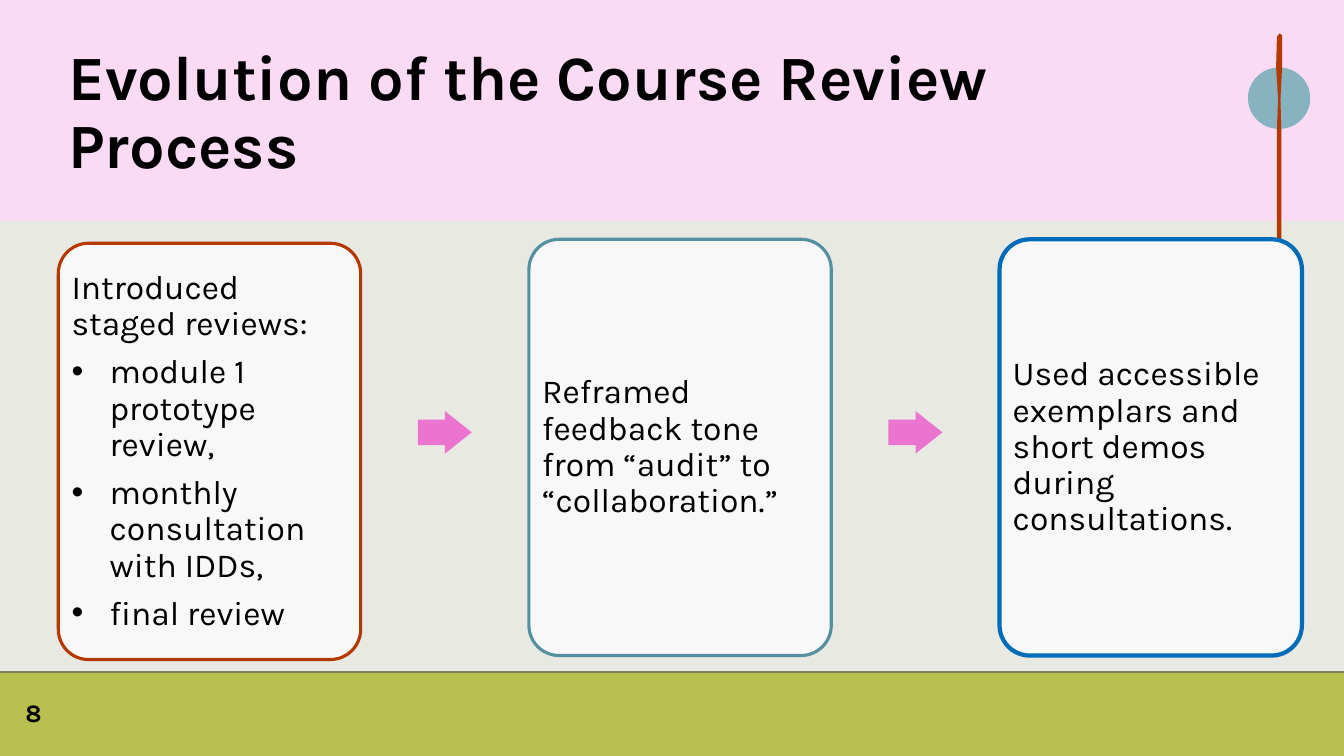
from dataclasses import dataclass

from lxml.etree import SubElement
from pptx import Presentation
from pptx.dml.color import RGBColor
from pptx.enum.shapes import MSO_CONNECTOR as Connector, MSO_SHAPE as Shape
from pptx.enum.text import MSO_ANCHOR as Anchor, MSO_AUTO_SIZE as AutoSize, PP_ALIGN as Align
from pptx.oxml.ns import qn
from pptx.util import Cm, Pt


@dataclass(frozen=True)
class Theme:
    font: str = "Karla"
    title_size: int = 45
    body_size: int = 24
    number_size: int = 18
    ink: str = "000000"
    background: str = "E8E9E2"
    header: str = "FADBF3"
    footer: str = "B8C04F"
    rule: str = "7E8263"
    disc: str = "86B3BF"
    rust: str = "B43901"
    teal: str = "54909F"
    blue: str = "006BB8"
    card: str = "F8F8F8"
    arrow: str = "EC74D1"


def color(value):
    return RGBColor.from_string(value)


def apply(target, values):
    for name, value in values.items():
        setattr(target, name, value)


class SlideBuilder:
    """Draws themed elements on one slide."""

    def __init__(self, slide, theme):
        self.slide = slide
        self.theme = theme
        fill = slide.background.fill
        fill.solid()
        fill.fore_color.rgb = color(theme.background)

    def paint(self, shape, fill, line=None, weight=0):
        shape.shadow.inherit = False
        shape.fill.solid()
        shape.fill.fore_color.rgb = color(fill)
        if line:
            shape.line.color.rgb = color(line)
            shape.line.width = Pt(weight)
        else:
            shape.line.fill.background()
        return shape

    def block(self, kind, box, fill, line=None, weight=0, adjustments=()):
        shape = self.slide.shapes.add_shape(kind, *map(Cm, box))
        for index, value in enumerate(adjustments):
            shape.adjustments[index] = value
        return self.paint(shape, fill, line, weight)

    def outline(self, points, fill):
        start, *rest = [(Cm(x), Cm(y)) for x, y in points]
        builder = self.slide.shapes.build_freeform(*start)
        builder.add_line_segments(rest, close=True)
        return self.paint(builder.convert_to_shape(), fill)

    def rule(self, start, end, line, weight):
        connector = self.slide.shapes.add_connector(Connector.STRAIGHT, *map(Cm, start + end))
        connector.line.color.rgb = color(line)
        connector.line.width = Pt(weight)
        SubElement(connector._element.spPr, qn("a:effectLst"))

    def frame(self, shape, anchor, margins):
        apply(shape.text_frame, {
            "word_wrap": True, "auto_size": AutoSize.NONE, "vertical_anchor": anchor,
            **{f"margin_{side}": Cm(value)
               for side, value in zip(("left", "top", "right", "bottom"), margins)},
        })
        return shape.text_frame

    def text(self, paragraph, words, size, bold=False, spacing=0.9, after=0):
        apply(paragraph, {"alignment": Align.LEFT, "line_spacing": spacing,
                          "space_before": Pt(0), "space_after": Pt(after)})
        run = paragraph.add_run()
        run.text = words
        apply(run.font, {"name": self.theme.font, "size": Pt(size), "bold": bold})
        run.font.color.rgb = color(self.theme.ink)

    def bullet(self, paragraph):
        properties = paragraph._p.get_or_add_pPr()
        properties.set("marL", str(Cm(0.96)))
        properties.set("indent", str(-Cm(0.96)))
        SubElement(properties, qn("a:buFont"), typeface="Arial")
        SubElement(properties, qn("a:buChar"), char="•")

    def title(self, words, box):
        title = self.slide.shapes.title
        self.slide.shapes._spTree.append(title._element)
        apply(title, dict(zip(("left", "top", "width", "height"), map(Cm, box))))
        frame = self.frame(title, Anchor.BOTTOM, (0.25, 0.13, 0.25, 0.13))
        self.text(frame.paragraphs[0], words, self.theme.title_size, bold=True)

    def card(self, box, line, weight, lead, bullets=()):
        shape = self.block(Shape.ROUNDED_RECTANGLE, box, self.theme.card, line, weight, (0.1,))
        frame = self.frame(shape, Anchor.MIDDLE, (0.11,) * 4)
        self.text(frame.paragraphs[0], lead, self.theme.body_size, after=8.5)
        for words in bullets:
            paragraph = frame.add_paragraph()
            self.text(paragraph, words, self.theme.body_size, after=8.5)
            self.bullet(paragraph)

    def number(self, words, box):
        shape = self.slide.shapes.add_textbox(*map(Cm, box))
        frame = self.frame(shape, Anchor.BOTTOM, (0,) * 4)
        self.text(frame.paragraphs[0], words, self.theme.number_size, bold=True, spacing=1)


def main():
    width, height, header_height, footer_top = 33.87, 19.05, 5.56, 16.93
    card_left, card_step, card_width, card_height = 1.47, 11.86, 7.62, 10.49
    arrow_width, arrow_height = 1.36, 1.07
    theme = Theme()

    presentation = Presentation()
    apply(presentation, {"slide_width": Cm(width), "slide_height": Cm(height)})
    slide = presentation.slides.add_slide(presentation.slide_layouts[5])
    builder = SlideBuilder(slide, theme)

    builder.block(Shape.RECTANGLE, (0, 0, width, header_height), theme.header)
    builder.block(Shape.RECTANGLE, (0, footer_top, width, height - footer_top), theme.footer)
    builder.rule((0, footer_top), (width, footer_top), theme.rule, 1)
    builder.block(Shape.OVAL, (31.45, 1.7, 1.57, 1.55), theme.disc)
    rod = [(32.18, 0.93), (32.25, 0.84), (32.31, 0.89), (32.31, 1.7), (32.27, 2.5),
           (32.29, 3.26), (32.29, 6.4), (32.18, 6.35), (32.18, 3.28), (32.21, 2.5), (32.16, 1.7)]
    builder.outline(rod, theme.rust)
    builder.title("Evolution of the Course Review Process", (1.47, 1.3, 28.68, 3.43))

    cards = [
        (6.13, theme.rust, 2.25, "Introduced staged reviews:",
         ("module 1 prototype review,", "monthly consultation with IDDs,", "final review")),
        (6.03, theme.teal, 2.25, "Reframed feedback tone from “audit” to “collaboration.”", ()),
        (6.03, theme.blue, 3, "Used accessible exemplars and short demos during consultations.", ()),
    ]
    for index, (top, line, weight, lead, bullets) in enumerate(cards):
        left = card_left + index * card_step
        if index:
            gap = card_step - card_width
            arrow_left = left - (gap + arrow_width) / 2
            builder.block(Shape.RIGHT_ARROW, (arrow_left, 10.36, arrow_width, arrow_height),
                          theme.arrow, adjustments=(0.6, 0.63))
        builder.card((left, top, card_width, card_height), line, weight, lead, bullets)

    builder.number("8", (0.64, 17.58, 1.78, 0.76))
    presentation.save("out.pptx")


if __name__ == "__main__":
    main()
